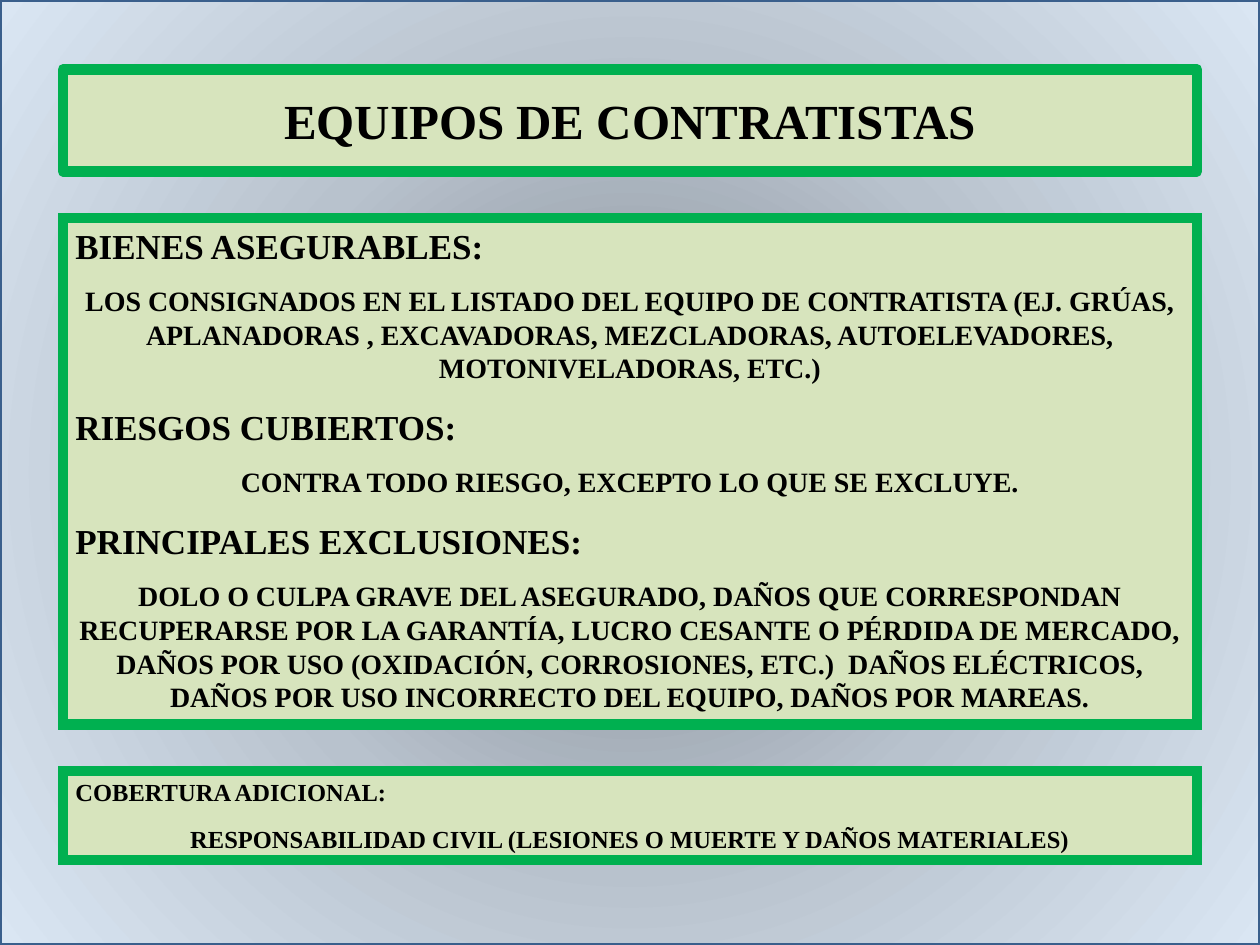
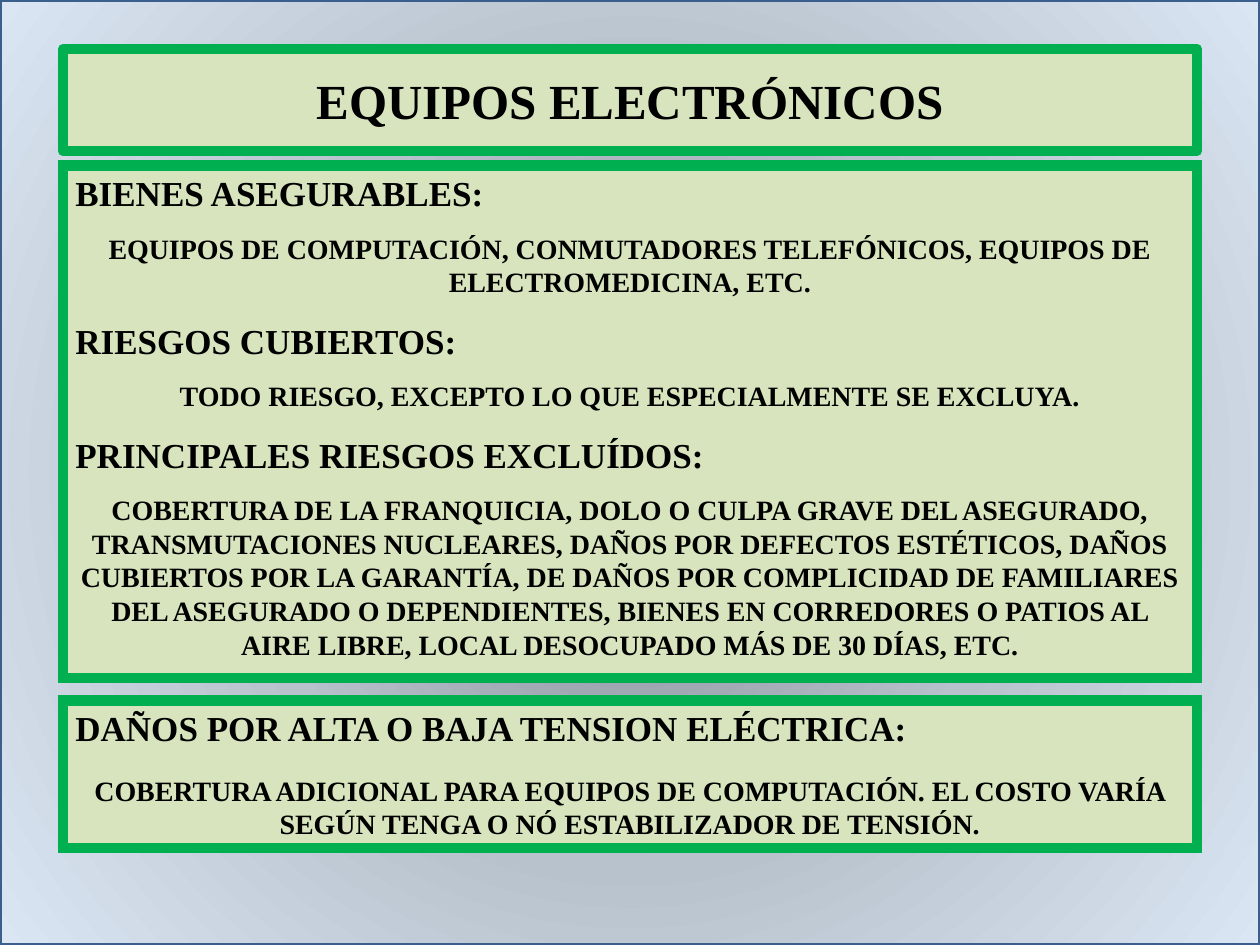
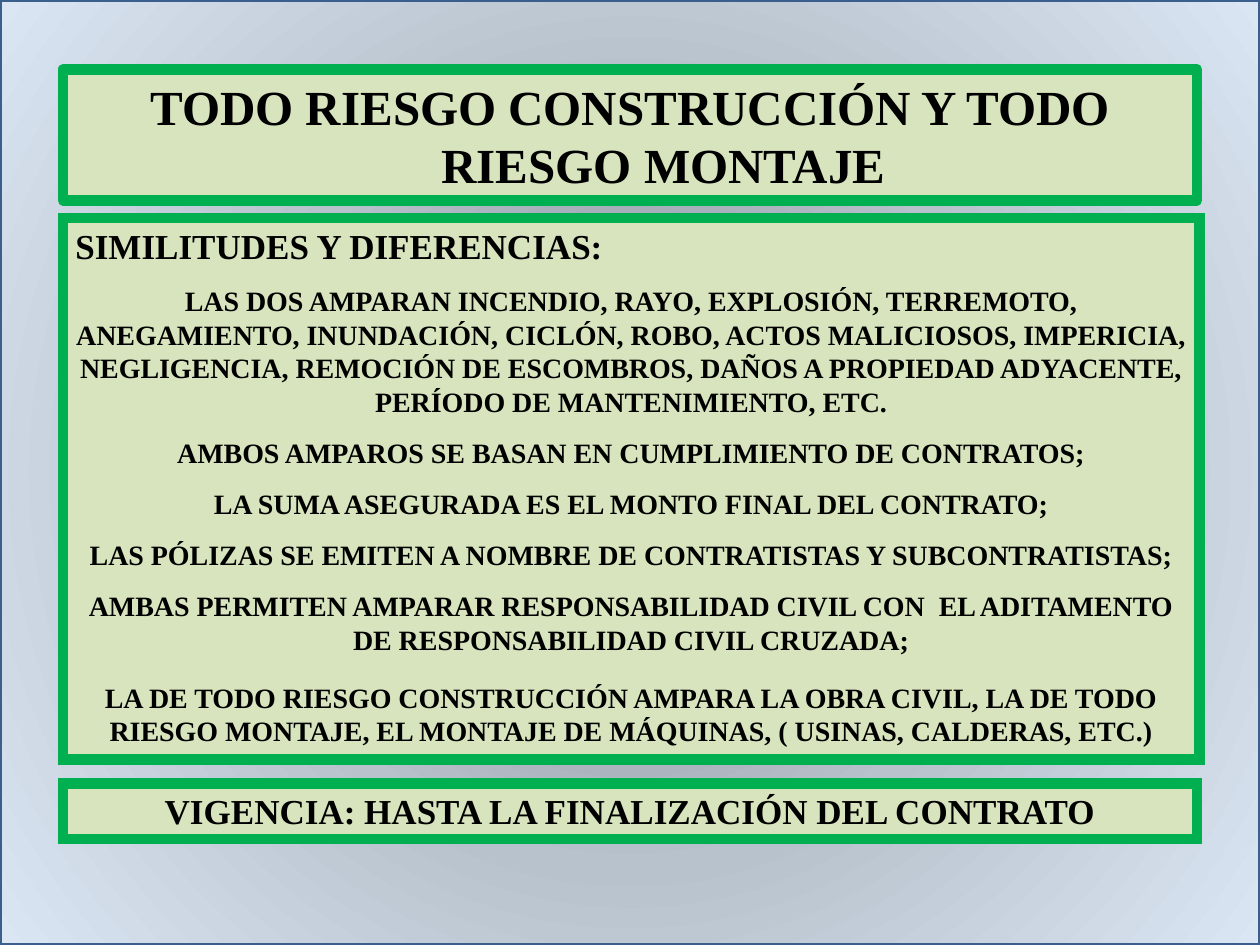
from pptx import Presentation
from pptx.dml.color import RGBColor
from pptx.enum.shapes import MSO_SHAPE
from pptx.enum.text import MSO_ANCHOR, MSO_AUTO_SIZE, PP_ALIGN
from pptx.oxml import parse_xml
from pptx.oxml.ns import nsdecls, qn
from pptx.util import Pt
from lxml.etree import SubElement

SLIDE_WIDTH, SLIDE_HEIGHT = 720, 540
MARGIN = 36
PANEL_WIDTH = SLIDE_WIDTH - 2 * MARGIN
FONT = "Times New Roman"
INK = "000000"
PANEL_FILL = "D7E4BD"
PANEL_BORDER = "00B050"
BACKDROP_BORDER = "3A5F8C"
BACKDROP_STOPS = [(0, "818890"), (50, "B8C2CD"), (100, "DAE6F3")]
TITLE_HANG = 38.16


def color(hex_value):
    return RGBColor.from_string(hex_value)


def heading(text, size=20):
    return text, size, 12, PP_ALIGN.LEFT


def detail(text, size=16, before=10):
    return text, size, before, PP_ALIGN.CENTER


def add_backdrop(slide):
    backdrop = slide.shapes.add_shape(
        MSO_SHAPE.RECTANGLE, 0, 0, Pt(SLIDE_WIDTH), Pt(SLIDE_HEIGHT))
    backdrop.shadow.inherit = False
    backdrop.fill.gradient()
    stops = "".join(
        f'<a:gs pos="{position * 1000}"><a:srgbClr val="{shade}"/></a:gs>'
        for position, shade in BACKDROP_STOPS)
    radial = parse_xml(
        f'<a:gradFill {nsdecls("a")} rotWithShape="1"><a:gsLst>{stops}</a:gsLst>'
        '<a:path path="circle"><a:fillToRect l="50000" t="50000" r="50000" b="50000"/>'
        '</a:path></a:gradFill>')
    properties = backdrop.element.spPr
    properties.replace(properties.find(qn("a:gradFill")), radial)
    backdrop.line.color.rgb = color(BACKDROP_BORDER)
    backdrop.line.width = Pt(2)


def add_panel(slide, top, height, paragraphs, width=PANEL_WIDTH, join="miter"):
    panel = slide.shapes.add_textbox(Pt(MARGIN), Pt(top), Pt(width), Pt(height))
    panel.fill.solid()
    panel.fill.fore_color.rgb = color(PANEL_FILL)
    panel.line.color.rgb = color(PANEL_BORDER)
    panel.line.width = Pt(6)
    SubElement(panel.line._get_or_add_ln(), qn(f"a:{join}"))
    frame = panel.text_frame
    frame.word_wrap = True
    frame.auto_size = MSO_AUTO_SIZE.SHAPE_TO_FIT_TEXT
    for index, (text, size, before, alignment) in enumerate(paragraphs):
        paragraph = frame.add_paragraph() if index else frame.paragraphs[0]
        paragraph.text = text
        paragraph.alignment = alignment
        if index:
            paragraph.space_before = Pt(before)
        paragraph.font.name = FONT
        paragraph.font.size = Pt(size)
        paragraph.font.bold = True
        paragraph.font.color.rgb = color(INK)
    return panel


def add_title(slide, text, top, height):
    frame = add_panel(slide, top, height, [detail(text, 28)], join="round").text_frame
    frame.auto_size = MSO_AUTO_SIZE.NONE
    frame.vertical_anchor = MSO_ANCHOR.MIDDLE
    indents = frame.paragraphs[0]._p.get_or_add_pPr()
    indents.set("marL", str(Pt(TITLE_HANG)))
    indents.set("indent", str(-Pt(TITLE_HANG)))


def add_policy_slide(deck, title, title_top, title_height):
    slide = deck.slides.add_slide(deck.slide_layouts[6])
    add_backdrop(slide)
    add_title(slide, title, title_top, title_height)
    return slide


def main():
    deck = Presentation()
    deck.slide_width, deck.slide_height = Pt(SLIDE_WIDTH), Pt(SLIDE_HEIGHT)

    contractors = add_policy_slide(deck, "EQUIPOS DE CONTRATISTAS", 39.6, 58.3)
    add_panel(contractors, 124.5, 289.5, [
        heading("BIENES ASEGURABLES:"),
        detail("LOS CONSIGNADOS EN EL LISTADO DEL EQUIPO DE CONTRATISTA (EJ. GRÚAS, "
               "APLANADORAS , EXCAVADORAS, MEZCLADORAS, AUTOELEVADORES, "
               "MOTONIVELADORAS, ETC.)"),
        heading("RIESGOS CUBIERTOS:"),
        detail("CONTRA TODO RIESGO, EXCEPTO LO QUE SE EXCLUYE."),
        heading("PRINCIPALES EXCLUSIONES:"),
        detail("DOLO O CULPA GRAVE DEL ASEGURADO, DAÑOS QUE CORRESPONDAN "
               "RECUPERARSE POR LA GARANTÍA, LUCRO CESANTE O PÉRDIDA DE MERCADO, "
               "DAÑOS POR USO (OXIDACIÓN, CORROSIONES, ETC.)  DAÑOS ELÉCTRICOS, "
               "DAÑOS POR USO INCORRECTO DEL EQUIPO, DAÑOS POR MAREAS."),
    ])
    add_panel(contractors, 440.6, 51, [
        heading("COBERTURA ADICIONAL:", 14),
        detail("RESPONSABILIDAD CIVIL (LESIONES O MUERTE Y DAÑOS MATERIALES)", 14),
    ])

    electronics = add_policy_slide(deck, "EQUIPOS ELECTRÓNICOS", 28, 58.3)
    add_panel(electronics, 94.5, 293, [
        heading("BIENES ASEGURABLES:"),
        detail("EQUIPOS DE COMPUTACIÓN, CONMUTADORES TELEFÓNICOS, EQUIPOS DE "
               "ELECTROMEDICINA, ETC."),
        heading("RIESGOS CUBIERTOS:"),
        detail("TODO RIESGO, EXCEPTO LO QUE ESPECIALMENTE SE EXCLUYA."),
        heading("PRINCIPALES RIESGOS EXCLUÍDOS:"),
        detail("COBERTURA DE LA FRANQUICIA, DOLO O CULPA GRAVE DEL ASEGURADO, "
               "TRANSMUTACIONES NUCLEARES, DAÑOS POR DEFECTOS ESTÉTICOS, DAÑOS "
               "CUBIERTOS POR LA GARANTÍA, DE DAÑOS POR COMPLICIDAD DE FAMILIARES "
               "DEL ASEGURADO O DEPENDIENTES, BIENES EN CORREDORES O PATIOS AL "
               "AIRE LIBRE, LOCAL DESOCUPADO MÁS DE 30 DÍAS, ETC."),
    ])
    add_panel(electronics, 400.3, 84.2, [
        heading("DAÑOS POR ALTA O BAJA TENSION ELÉCTRICA:"),
        detail("COBERTURA ADICIONAL PARA EQUIPOS DE COMPUTACIÓN. EL COSTO VARÍA "
               "SEGÚN TENGA O NÓ ESTABILIZADOR DE TENSIÓN.", before=14),
    ])

    works = add_policy_slide(
        deck, "TODO RIESGO CONSTRUCCIÓN Y TODO RIESGO MONTAJE", 39.6, 75)
    add_panel(works, 124.5, 309.6, [
        heading("SIMILITUDES Y DIFERENCIAS:"),
        detail("LAS DOS AMPARAN INCENDIO, RAYO, EXPLOSIÓN, TERREMOTO, "
               "ANEGAMIENTO, INUNDACIÓN, CICLÓN, ROBO, ACTOS MALICIOSOS, IMPERICIA, "
               "NEGLIGENCIA, REMOCIÓN DE ESCOMBROS, DAÑOS A PROPIEDAD ADYACENTE, "
               "PERÍODO DE MANTENIMIENTO, ETC."),
        detail("AMBOS AMPAROS SE BASAN EN CUMPLIMIENTO DE CONTRATOS;"),
        detail("LA SUMA ASEGURADA ES EL MONTO FINAL DEL CONTRATO;"),
        detail("LAS PÓLIZAS SE EMITEN A NOMBRE DE CONTRATISTAS Y SUBCONTRATISTAS;"),
        detail("AMBAS PERMITEN AMPARAR RESPONSABILIDAD CIVIL CON  EL ADITAMENTO "
               "DE RESPONSABILIDAD CIVIL CRUZADA;"),
        detail("LA DE TODO RIESGO CONSTRUCCIÓN AMPARA LA OBRA CIVIL, LA DE TODO "
               "RIESGO MONTAJE, EL MONTAJE DE MÁQUINAS, ( USINAS, CALDERAS, ETC.)",
               before=14),
    ], width=649.4)
    add_panel(works, 447.8, 31.7, [
        detail("VIGENCIA: HASTA LA FINALIZACIÓN DEL CONTRATO", 20),
    ])

    deck.save("out.pptx")


if __name__ == "__main__":
    main()
